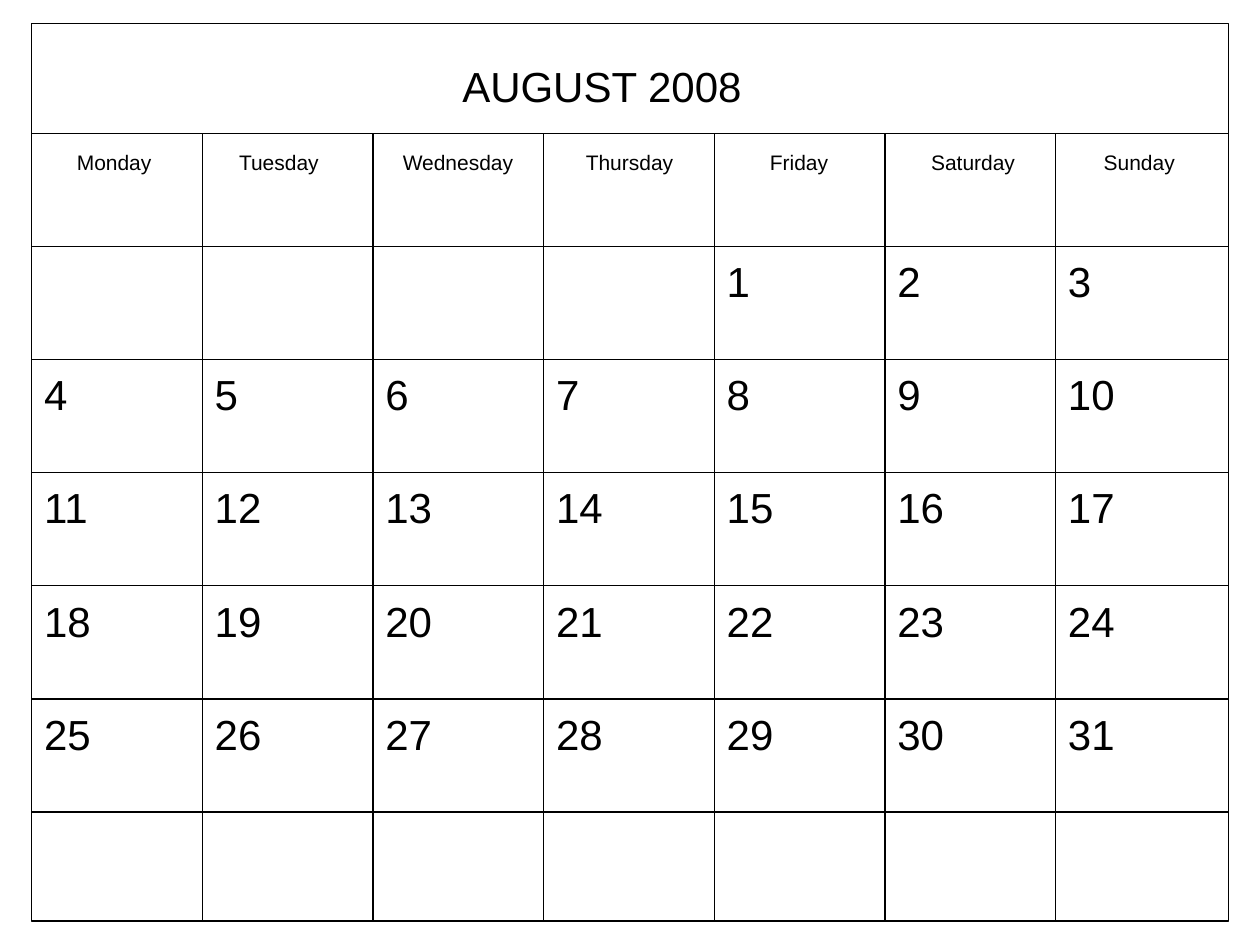
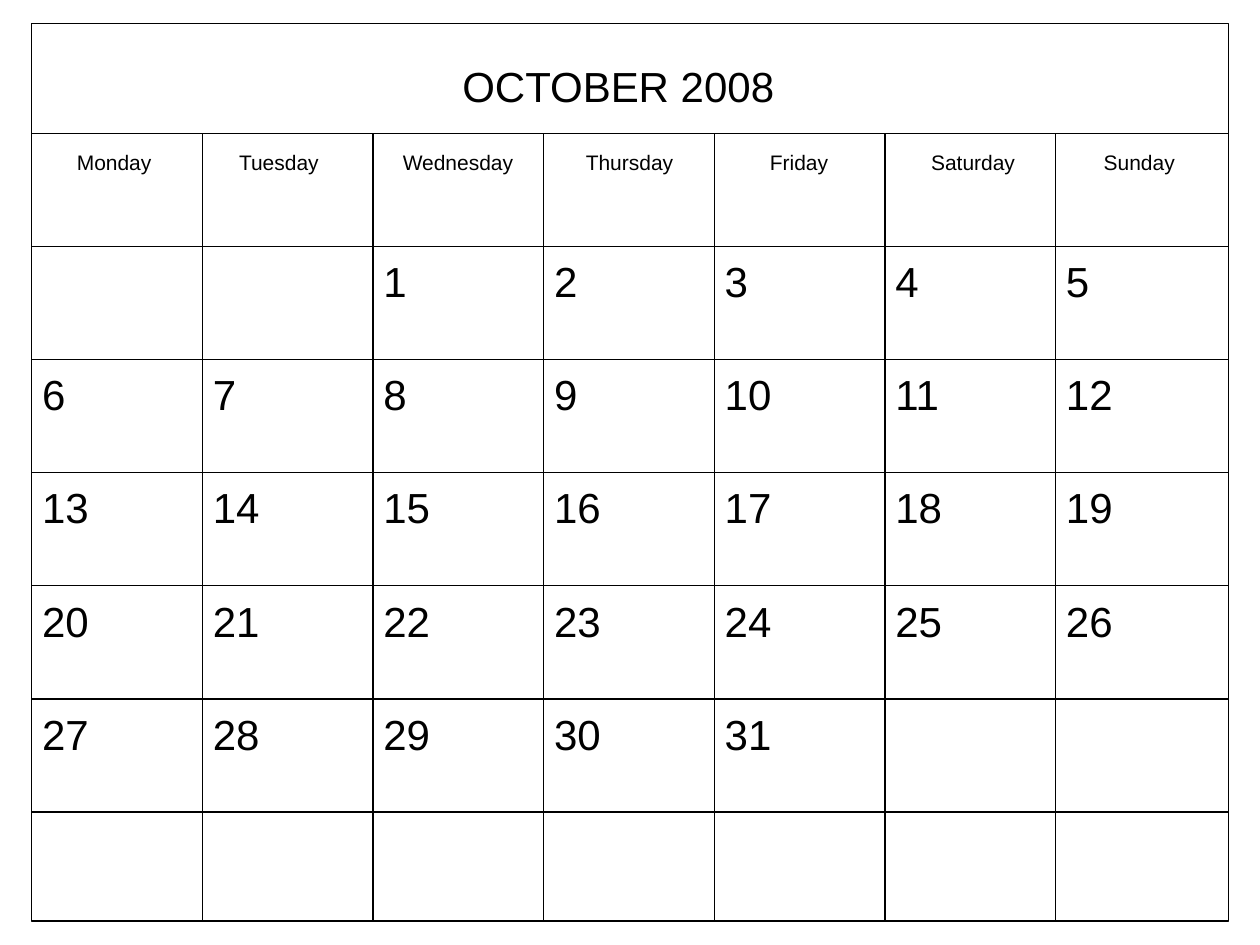
from dataclasses import dataclass

from pptx import Presentation
from pptx.dml.color import RGBColor
from pptx.enum.shapes import MSO_CONNECTOR, MSO_SHAPE
from pptx.enum.text import MSO_ANCHOR, MSO_AUTO_SIZE
from pptx.oxml.ns import qn
from pptx.util import Cm, Pt
from lxml.etree import SubElement

# first_column: weekday of the 1st (0 = Monday); date_shift: offset in cm from the column edge
MONTHS = [
    {"title": "AUGUST 2008", "title_width": 6.17, "first_column": 4, "date_shift": 0},
    {"title": "OCTOBER 2008", "title_width": 6.81, "first_column": 2, "date_shift": -0.04},
]
DAYS_IN_MONTH = 31

# Weekday, left and width in cm
WEEKDAYS = [
    ("Monday", 1.3, 2.03),
    ("Tuesday", 4.57, 2.13),
    ("Wednesday", 7.87, 2.74),
    ("Thursday", 11.56, 2.29),
    ("Friday", 15.27, 1.68),
    ("Saturday", 18.52, 2.21),
    ("Sunday", 22, 1.96),
]


@dataclass(frozen=True)
class Theme:
    ink: RGBColor = RGBColor(0, 0, 0)
    font: str = "Arial"
    large: Pt = Pt(24)
    small: Pt = Pt(12)
    rule: Pt = Pt(0.75)


THEME = Theme()

FRAME_LEFT, FRAME_TOP = Cm(0.64), Cm(0.48)
FRAME_WIDTH, FRAME_HEIGHT = Cm(24.12), Cm(18.09)
FRAME_RIGHT, FRAME_BOTTOM = FRAME_LEFT + FRAME_WIDTH, FRAME_TOP + FRAME_HEIGHT
GRID_TOP = Cm(2.69)
COLUMN_WIDTH, ROW_HEIGHT = Cm(3.44), Cm(2.28)
ROW_LINES = 7
MIDDLE_ROW_LINE = 3


def add_text(slide, text, left, top, width, height, *, size, anchor=MSO_ANCHOR.TOP,
             auto_size=MSO_AUTO_SIZE.NONE):
    frame = slide.shapes.add_textbox(left, top, width, height).text_frame
    frame.word_wrap = False
    frame.auto_size = auto_size
    frame.vertical_anchor = anchor
    run = frame.paragraphs[0].add_run()
    run.text = text
    run.font.name = THEME.font
    run.font.size = size
    run.font.color.rgb = THEME.ink


def set_rule(shape):
    shape.line.color.rgb = THEME.ink
    shape.line.width = THEME.rule


def add_rule(slide, start_x, start_y, end_x, end_y):
    connector = slide.shapes.add_connector(
        MSO_CONNECTOR.STRAIGHT, start_x, start_y, end_x, end_y)
    set_rule(connector)
    SubElement(connector._element.spPr, qn("a:effectLst"))
    return connector


def add_grid(slide):
    frame = slide.shapes.add_shape(
        MSO_SHAPE.RECTANGLE, FRAME_LEFT, FRAME_TOP, FRAME_WIDTH, FRAME_HEIGHT)
    frame.shadow.inherit = False
    frame.fill.background()
    set_rule(frame)
    for column in range(1, len(WEEKDAYS)):
        x = FRAME_LEFT + column * COLUMN_WIDTH
        add_rule(slide, x, GRID_TOP, x, FRAME_BOTTOM)
    for row in range(ROW_LINES):
        y = GRID_TOP + row * ROW_HEIGHT
        connector = add_rule(slide, FRAME_LEFT, y, FRAME_RIGHT, y)
        if row == MIDDLE_ROW_LINE:
            connector.begin_connect(frame, 1)
            connector.end_connect(frame, 3)


def add_dates(slide, month):
    for day in range(1, DAYS_IN_MONTH + 1):
        week, column = divmod(month["first_column"] + day - 1, len(WEEKDAYS))
        left = FRAME_LEFT + column * COLUMN_WIDTH + Cm(month["date_shift"])
        top = GRID_TOP + (week + 1) * ROW_HEIGHT + Cm(0.02)
        add_text(slide, str(day), left, top, Cm(1.9), Cm(1.35),
                 size=THEME.large, anchor=MSO_ANCHOR.MIDDLE)


def add_month(presentation, month):
    slide = presentation.slides.add_slide(presentation.slide_layouts[6])
    add_grid(slide)
    add_text(slide, month["title"], Cm(9.07), Cm(1.09), Cm(month["title_width"]), Cm(1.27),
             size=THEME.large, auto_size=MSO_AUTO_SIZE.SHAPE_TO_FIT_TEXT)
    for weekday, left, width in WEEKDAYS:
        add_text(slide, weekday, Cm(left), Cm(2.9), Cm(width), Cm(0.76),
                 size=THEME.small, auto_size=MSO_AUTO_SIZE.SHAPE_TO_FIT_TEXT)
    add_dates(slide, month)


def main():
    presentation = Presentation()
    presentation.slide_width, presentation.slide_height = Cm(25.4), Cm(19.05)
    for month in MONTHS:
        add_month(presentation, month)
    presentation.save("out.pptx")


if __name__ == "__main__":
    main()
